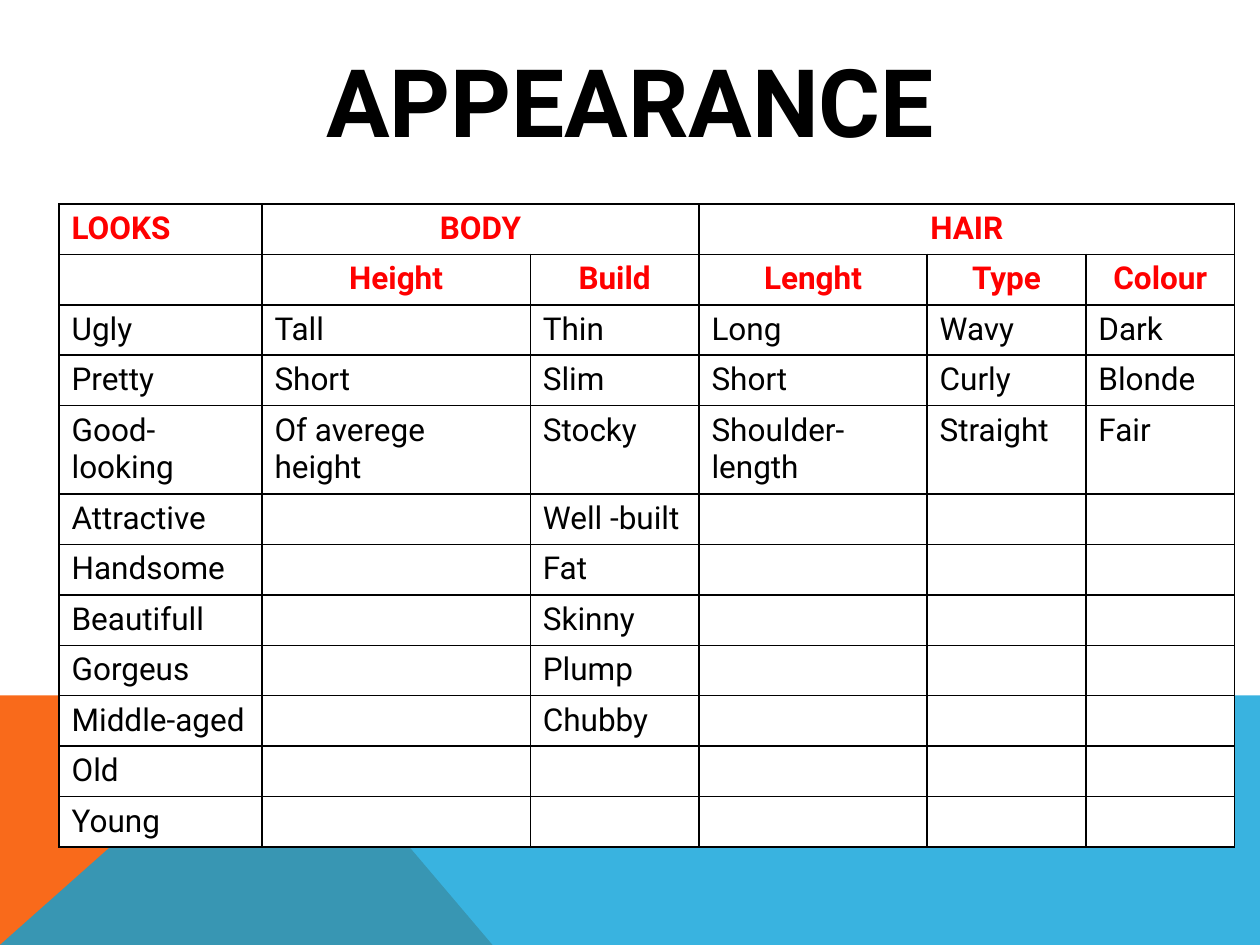
import pptx
import pptx.dml.color
import pptx.enum.text
import pptx.oxml
import pptx.oxml.ns
import pptx.util
from pptx.util import Cm

FONT = "Roboto"
BLACK, WHITE, RED = "000000", "FFFFFF", "FF0000"
ORANGE, BLUE = "F96A1B", "08A1D9"
COLUMN_WIDTHS = [4.09, 5.41, 3.4, 4.6, 3.2, 3]
ROW_HEIGHT = 1.01
HEADER_ROWS = 2
HEADER_SPANS = [(1, 2), (3, 5)]
ROWS = [
    ["LOOKS", "BODY", "", "HAIR", "", ""],
    ["", "Height", "Build", "Lenght", "Type", "Colour"],
    ["Ugly", "Tall", "Thin", "Long", "Wavy", "Dark"],
    ["Pretty", "Short", "Slim", "Short", "Curly", "Blonde"],
    ["Good-looking", "Of averege height", "Stocky", "Shoulder- length", "Straight", "Fair"],
    ["Attractive", "", "Well -built", "", "", ""],
    ["Handsome", "", "Fat", "", "", ""],
    ["Beautifull", "", "Skinny", "", "", ""],
    ["Gorgeus", "", "Plump", "", "", ""],
    ["Middle-aged", "", "Chubby", "", "", ""],
    ["Old", "", "", "", "", ""],
    ["Young", "", "", "", "", ""],
]


def set_color(color_format, value):
    """Turn a fill's or font's color solid in the given hex value."""
    color_format.rgb = pptx.dml.color.RGBColor.from_string(value)


def write_text(text_frame, text, size=18, color=BLACK, bold=False, align="LEFT"):
    """Write one formatted paragraph."""
    paragraph = text_frame.paragraphs[0]
    paragraph.text = text
    paragraph.alignment = getattr(pptx.enum.text.PP_ALIGN, align)
    paragraph.font.name = FONT
    paragraph.font.size = pptx.util.Pt(size)
    paragraph.font.bold = bold
    set_color(paragraph.font.color, color)


def add_band(slide, points, color, opacity=100):
    """Draw a filled polygon through points in centimetres."""
    corners = [(Cm(x), Cm(y)) for x, y in points]
    builder = slide.shapes.build_freeform(*corners[0])
    builder.add_line_segments(corners[1:], close=True)
    shape = builder.convert_to_shape()
    shape.shadow.inherit = False
    shape.line.fill.background()
    shape.fill.solid()
    set_color(shape.fill.fore_color, color)
    if opacity < 100:
        color_element = shape.fill._xPr.find(".//" + pptx.oxml.ns.qn("a:srgbClr"))
        color_element.append(pptx.oxml.parse_xml(
            f'<a:alpha {pptx.oxml.ns.nsdecls("a")} val="{opacity * 1000}"/>'))


def add_footer(slide, left, top, width, height):
    """Draw the two overlapping bands at the foot of the slide."""
    right, bottom, peak = left + width, top + height, left + 5.66
    add_band(slide, [(left, bottom), (left, top), (peak, top), (left + 9.93, bottom)], ORANGE)
    add_band(slide, [(left, bottom), (peak, top), (right, top), (right, bottom)], BLUE, 80)


def add_title(slide, left, top, width, height):
    """Place the slide title."""
    text_box = slide.shapes.add_textbox(Cm(left), Cm(top), Cm(width), Cm(height))
    text_box.text_frame.word_wrap = False
    write_text(text_box.text_frame, "APPEARANCE", size=54, bold=True, align="CENTER")


def set_borders(cell):
    """Give a cell thin black borders on all four sides."""
    properties = cell._tc.get_or_add_tcPr()
    for index, side in enumerate(("lnL", "lnR", "lnT", "lnB")):
        properties.insert(index, pptx.oxml.parse_xml(
            f'<a:{side} {pptx.oxml.ns.nsdecls("a")} w="12700"><a:solidFill>'
            f'<a:srgbClr val="{BLACK}"/></a:solidFill></a:{side}>'))


def add_vocabulary(slide, left, top):
    """Place the table of words for looks, body and hair."""
    table = slide.shapes.add_table(
        len(ROWS), len(COLUMN_WIDTHS), Cm(left), Cm(top),
        Cm(sum(COLUMN_WIDTHS)), Cm(ROW_HEIGHT * len(ROWS))).table
    table.first_row = table.horz_banding = False
    for column, width in zip(table.columns, COLUMN_WIDTHS):
        column.width = Cm(width)
    for first, last in HEADER_SPANS:
        table.cell(0, first).merge(table.cell(0, last))
    for row_index, words in enumerate(ROWS):
        table.rows[row_index].height = Cm(ROW_HEIGHT)
        header = row_index < HEADER_ROWS
        for column_index, word in enumerate(words):
            cell = table.cell(row_index, column_index)
            cell.fill.solid()
            set_color(cell.fill.fore_color, WHITE)
            set_borders(cell)
            write_text(cell.text_frame, word, color=RED if header else BLACK, bold=header,
                       align="CENTER" if header and column_index else "LEFT")


def main():
    """Build and save the slide."""
    presentation = pptx.Presentation()
    presentation.slide_width, presentation.slide_height = Cm(25.4), Cm(19.05)
    slide = presentation.slides.add_slide(presentation.slide_layouts[6])
    add_footer(slide, 0, 14.02, 25.4, 5.03)
    add_title(slide, 5.72, 0.74, 13.97, 2.57)
    add_vocabulary(slide, 1.19, 4.11)
    presentation.save("out.pptx")


if __name__ == "__main__":
    main()
